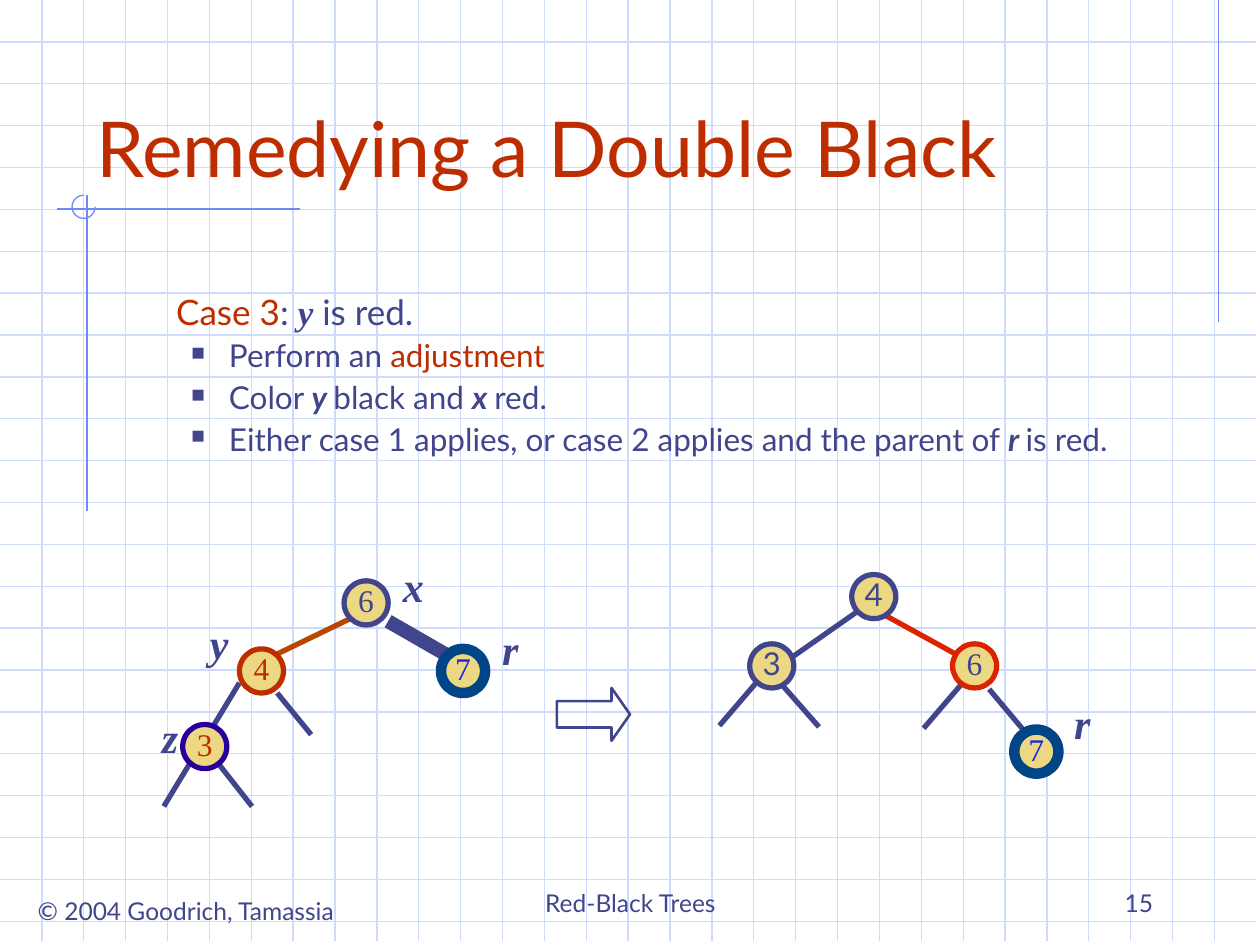
from lxml.etree import SubElement
from pptx import Presentation
from pptx.dml.color import RGBColor
from pptx.enum.shapes import MSO_CONNECTOR, MSO_SHAPE
from pptx.enum.text import MSO_ANCHOR, PP_ALIGN
from pptx.oxml.ns import qn
from pptx.util import Pt

SANS, SERIF = "Lato", "Times New Roman"
INK, RUST, RED, ORANGE = "40458C", "BE2D00", "DC2300", "B84700"
VIOLET, NAVY, BLUE, SAND = "280099", "004586", "2323DC", "ECD882"
GRID, FRAME = "CFDBFD", "6F89F7"
LEFT, CENTER, RIGHT = PP_ALIGN.LEFT, PP_ALIGN.CENTER, PP_ALIGN.RIGHT
TOP, MIDDLE, BOTTOM = MSO_ANCHOR.TOP, MSO_ANCHOR.MIDDLE, MSO_ANCHOR.BOTTOM

WIDTH, HEIGHT = 720, 540
GRID_STEP, GRID_ROWS, GRID_COLUMNS = 23.93, 22, 29
GRID_RIGHT, GRID_BOTTOM = 718, 538
NODE_SIZE, LABEL_SIZE = 25.2, 36

TITLE = "Remedying a Double Black"
EMPHASIS = {"bold": True, "italic": True}
# Each paragraph is a list of (text, run format)
CASE = [
    [("Case 3", {"color": RUST}), (": ", {}),
     ("y", {"font": SERIF, **EMPHASIS}), (" is red.", {})],
    [("Perform an ", {}), ("adjustment", {"color": RUST})],
    [("Color ", {}), ("y ", EMPHASIS), ("black and ", {}),
     ("x ", EMPHASIS), ("red.", {})],
    [("Either case 1 applies, or case 2 applies and the parent of ", {}),
     ("r ", EMPHASIS), ("is red.", {})],
]
# text, box, format
FOOTERS = [
    ("© 2004 Goodrich, Tamassia", (13, 508.3, 186.5, 24.5),
     {"align": CENTER, "wrap": False}),
    ("Red-Black Trees", (246.2, 492, 228.2, 36), {"align": CENTER, "anchor": BOTTOM}),
    ("15", (516.2, 492, 149.8, 36), {"align": RIGHT, "anchor": BOTTOM}),
]
FRAME_LINES = [
    (696.2, 0, 696.2, 184.3),
    (171.4, 119.5, 32.4, 119.5),
    (49.7, 111.6, 49.7, 292.3),
]
# start x, start y, end x, end y, colour, width
EDGES = [
    (200.2, 353.5, 158.4, 373.7, ORANGE, 3),
    (221.8, 355, 260.6, 377.3, INK, 8),
    (136.8, 390.2, 122.4, 414, INK, 3),
    (158.4, 396, 177.8, 419.8, INK, 3),
    (108, 437, 93.6, 460.8, INK, 3),
    (125.3, 437, 144, 460.8, INK, 3),
    (490.3, 349.2, 447.1, 379.4, INK, 3),
    (505.4, 351.4, 555.1, 378.7, RED, 3),
    (432.7, 389.5, 411.1, 414.7, INK, 3),
    (447.8, 392.4, 468, 415.4, INK, 3),
    (549.4, 391, 527.8, 416.2, INK, 3),
    (565.2, 393.8, 584.6, 416.9, INK, 3),
]
# key, centre x, centre y, ring colour, ring width, key colour, key font
NODES = [
    ("6", 209.2, 344.5, INK, 3, INK, SERIF),
    ("4", 149.4, 383.4, RUST, 3, RUST, SERIF),
    ("3", 117, 426.6, VIOLET, 3, RUST, SERIF),
    ("7", 264.6, 383.4, NAVY, 6, BLUE, SERIF),
    ("4", 499.3, 340.9, INK, 3, INK, SANS),
    ("3", 441, 380.5, INK, 3, INK, SANS),
    ("6", 556.9, 380.5, RED, 3, INK, SERIF),
    ("7", 592.2, 429.5, NAVY, 6, BLUE, SERIF),
]
# name, left, top
LABELS = [
    ("x", 218.2, 316.8), ("y", 107.3, 349.2), ("z", 79.2, 403.2),
    ("r", 273.6, 352.8), ("r", 600.5, 395.3),
]


def rgb(color):
    return RGBColor.from_string(color)


def add_line(slide, start_x, start_y, end_x, end_y, color, width=0.75):
    line = slide.shapes.add_connector(
        MSO_CONNECTOR.STRAIGHT, Pt(start_x), Pt(start_y), Pt(end_x), Pt(end_y))
    line.line.color.rgb = rgb(color)
    line.line.width = Pt(width)
    SubElement(line._element.spPr, qn("a:effectLst"))


def add_shape(slide, kind, box, color, width, fill=None):
    shape = slide.shapes.add_shape(kind, *map(Pt, box))
    shape.shadow.inherit = False
    shape.line.color.rgb = rgb(color)
    shape.line.width = Pt(width)
    if fill:
        shape.fill.solid()
        shape.fill.fore_color.rgb = rgb(fill)
    else:
        shape.fill.background()
    return shape


def add_run(paragraph, text, size=14, font=SANS, color=INK, bold=False, italic=False):
    run = paragraph.add_run()
    run.text = text
    run.font.size = Pt(size)
    run.font.name = font
    run.font.color.rgb = rgb(color)
    run.font.bold = bold
    run.font.italic = italic


def set_text(shape, text, align=LEFT, anchor=TOP, wrap=True,
             insets=(7.2, 3.6, 7.2, 3.6), **run_format):
    frame = shape.text_frame
    frame.word_wrap = wrap
    frame.vertical_anchor = anchor
    (frame.margin_left, frame.margin_top,
     frame.margin_right, frame.margin_bottom) = map(Pt, insets)
    frame.paragraphs[0].alignment = align
    add_run(frame.paragraphs[0], text, **run_format)


def add_text(slide, text, box, **text_format):
    set_text(slide.shapes.add_textbox(*map(Pt, box)), text, **text_format)


def indent(paragraph, margin, first=0):
    properties = paragraph._p.get_or_add_pPr()
    properties.set("marL", str(Pt(margin)))
    properties.set("indent", str(Pt(first)))
    return properties


def add_bullet(paragraph):
    properties = indent(paragraph, 57.6, -21.6)
    SubElement(SubElement(properties, qn("a:buClr")), qn("a:srgbClr"), val=INK)
    SubElement(properties, qn("a:buSzPct"), val="60000")
    SubElement(properties, qn("a:buChar"), char="■")


def add_case(slide):
    frame = slide.shapes.add_textbox(Pt(66.2), Pt(165), Pt(612), Pt(297)).text_frame
    frame.word_wrap = True
    for number, runs in enumerate(CASE):
        if number:
            paragraph = frame.add_paragraph()
            add_bullet(paragraph)
            paragraph.space_before = Pt(4.5)
        else:
            paragraph = frame.paragraphs[0]
            indent(paragraph, 27.4)
        paragraph.line_spacing = 0.9
        for text, run_format in runs:
            add_run(paragraph, text, size=18 if number else 20, **run_format)


def add_background(slide):
    for row in range(1, GRID_ROWS + 1):
        add_line(slide, 0, row * GRID_STEP, GRID_RIGHT, row * GRID_STEP, GRID)
    for column in range(1, GRID_COLUMNS + 1):
        add_line(slide, column * GRID_STEP, 0, column * GRID_STEP, GRID_BOTTOM, GRID)
    for ends in FRAME_LINES:
        add_line(slide, *ends, FRAME)
    ring = add_shape(slide, MSO_SHAPE.ARC, (41.2, 111.6, 13.2, 13.2), FRAME, 0.75)
    ring.adjustments[0], ring.adjustments[1] = 0, 162  # three quarters of a turn


def add_trees(slide):
    for edge in EDGES:
        add_line(slide, *edge)
    for key, x, y, ring, width, color, font in NODES:
        box = (x - NODE_SIZE / 2, y - NODE_SIZE / 2, NODE_SIZE, NODE_SIZE)
        node = add_shape(slide, MSO_SHAPE.OVAL, box, ring, width, SAND)
        set_text(node, key, align=CENTER, anchor=MIDDLE, wrap=False,
                 insets=(0, 0, 0, 3.6), size=18, font=font, color=color)
    for name, left, top in LABELS:
        add_text(slide, name, (left, top, LABEL_SIZE, LABEL_SIZE), align=CENTER,
                 size=24, font=SERIF, **EMPHASIS)
    arrow = add_shape(slide, MSO_SHAPE.RIGHT_ARROW, (318.2, 393.1, 41.8, 30.2), INK, 1.5)
    arrow.adjustments[0], arrow.adjustments[1] = 0.5, 0.35


def main():
    deck = Presentation()
    deck.slide_width, deck.slide_height = Pt(WIDTH), Pt(HEIGHT)
    slide = deck.slides.add_slide(deck.slide_layouts[6])
    add_background(slide)
    for text, box, text_format in FOOTERS:
        add_text(slide, text, box, **text_format)
    add_text(slide, TITLE, (48, 24, 612, 90), anchor=BOTTOM, size=44, color=RUST)
    add_case(slide)
    add_trees(slide)
    deck.save("out.pptx")


if __name__ == "__main__":
    main()
